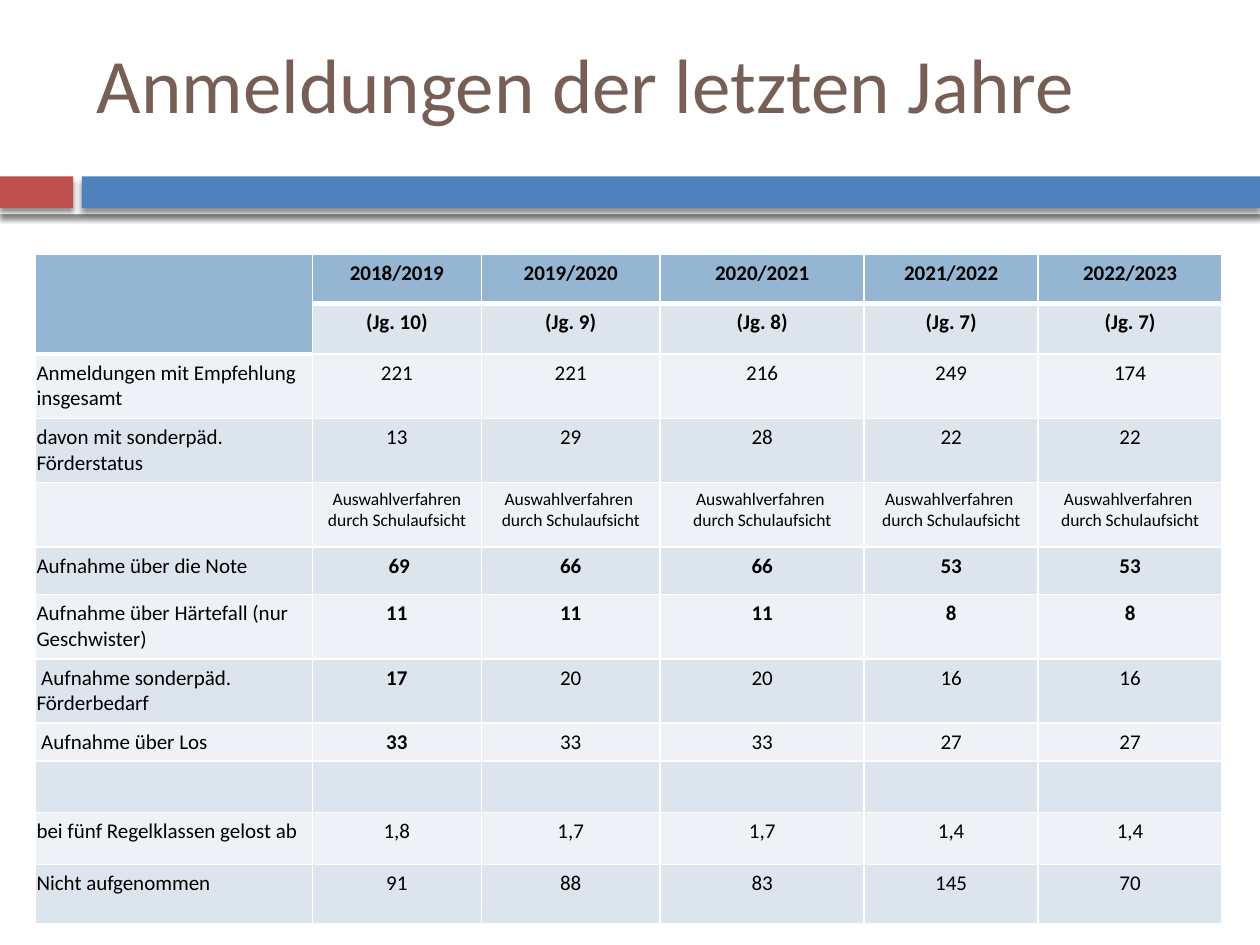
"""Build the slide with the table of school registrations by year."""
from lxml.etree import SubElement as Sub
from pptx import Presentation
from pptx.dml.color import RGBColor as RGB
from pptx.enum.shapes import MSO_SHAPE as Shape
from pptx.enum.text import MSO_ANCHOR as Anchor, PP_ALIGN as Align
from pptx.oxml.ns import qn
from pptx.util import Inches, Pt

WHITE = RGB(0xFF, 0xFF, 0xFF)
BLACK = RGB(0, 0, 0)
RED = RGB(0xC0, 0x50, 0x4D)
BLUE = RGB(0x4F, 0x81, 0xBD)
BROWN = RGB(0x77, 0x5F, 0x55)
HEAD = RGB(0x94, 0xB6, 0xD2)
DARK = RGB(0xDC, 0xE5, 0xEE)
LIGHT = RGB(0xEE, 0xF2, 0xF6)
FONT = "Calibri"

TITLE = "Anmeldungen der letzten Jahre"
BARS = [
    (0, 1.35, 10, 0.35, WHITE),
    (0, 1.4, 0.58, 0.25, RED),
    (0.65, 1.4, 9.35, 0.25, BLUE),
]
COLS = [2.2, 1.34, 1.42, 1.62, 1.38, 1.46]
PICK = "Auswahlverfahren |durch Schulaufsicht"
ROWS = [
    (0.39, 5, ["", "2018/2019", "2019/2020", "2020/2021", "2021/2022", "2022/2023"]),
    (0.3, 5, ["", "(Jg. 10)", "(Jg. 9)", "(Jg. 8)", "(Jg. 7)", "(Jg. 7)"]),
    (0.51, 0, ["Anmeldungen mit Empfehlung insgesamt", "221", "221", "216", "249", "174"]),
    (0.51, 0, ["davon mit sonderpäd. Förderstatus", "13", "29", "28", "22", "22"]),
    (0.51, 0, ["", "Auswahlverfahren durch Schulaufsicht"] + [PICK] * 4),
    (0.38, 5, ["Aufnahme über die Note", " 69", "66", "66", "53", "53"]),
    (0.51, 5, ["Aufnahme über Härtefall (nur\nGeschwister)", "11", "11", "11", "8", "8"]),
    (0.51, 1, [" Aufnahme sonderpäd. Förderbedarf", "17", "20", "20", "16", "16"]),
    (0.3, 1, [" Aufnahme über Los", "33", "33", "33", "27", "27"]),
    (0.41, 0, [""] * 6),
    (0.41, 0, ["bei fünf Regelklassen gelost ab", "1,8", "1,7", "1,7", "1,4", "1,4"]),
    (0.47, 0, ["Nicht aufgenommen", "91", "88", "83", "145", "70"]),
]
PICK_ROW = 4


def add_run(para, text, size, color, bold=False):
    run = para.add_run()
    run.text = text
    font = run.font
    font.name, font.size, font.bold = FONT, Pt(size), bold
    font.color.rgb = color


def add_bar(slide, left, top, width, height, color):
    bar = slide.shapes.add_shape(
        Shape.RECTANGLE, Inches(left), Inches(top), Inches(width), Inches(height))
    bar.fill.solid()
    bar.fill.fore_color.rgb = color
    bar.line.fill.background()
    bar.shadow.inherit = False
    glow = bar._element.spPr.find(qn("a:effectLst"))
    shade = Sub(glow, qn("a:outerShdw"), blurRad=str(Pt(3)), dist=str(Pt(2.4)),
                dir="5400000", algn="ctr", rotWithShape="0")
    tint = Sub(shade, qn("a:srgbClr"), val=str(BLACK))
    Sub(tint, qn("a:alpha"), val="45000")


def add_title(slide):
    box = slide.shapes.add_textbox(Inches(0.67), Inches(0.25), Inches(8.92), Inches(0.82))
    frame = box.text_frame
    frame.word_wrap = True
    frame.vertical_anchor = Anchor.MIDDLE
    add_run(frame.paragraphs[0], TITLE, 44, BROWN)


def add_edges(cell, top, base):
    props = cell._tc.get_or_add_tcPr()
    for side, width in (("L", 0.96), ("R", 0.96), ("T", top), ("B", base)):
        line = Sub(props, qn("a:ln" + side), w=str(Pt(width)))
        Sub(Sub(line, qn("a:solidFill")), qn("a:srgbClr"), val=str(WHITE))


def fill_cell(cell, text, row, col, bold):
    cell.margin_left = cell.margin_right = Inches(0.01)
    cell.margin_top = cell.margin_bottom = Inches(0.05)
    thick = row == 1 or (row == 2 and col == 0)
    add_edges(cell, 3 if thick else 0.96, 3 if row == 0 else 0.96)
    cell.fill.solid()
    cell.fill.fore_color.rgb = HEAD if row == 0 else (LIGHT, DARK)[row % 2]
    size = 10 if row == PICK_ROW else 12
    frame = cell.text_frame
    for n, line in enumerate(text.split("\n") if text else []):
        para = frame.add_paragraph() if n else frame.paragraphs[0]
        para.alignment = Align.CENTER if col else Align.LEFT
        for k, part in enumerate(line.split("|")):
            if k:
                para.add_line_break()
            add_run(para, part, size, BLACK, bold)


def add_grid(slide):
    high = sum(row[0] for row in ROWS)
    grid = slide.shapes.add_table(
        len(ROWS), len(COLS), Inches(0.28), Inches(2.02),
        Inches(sum(COLS)), Inches(high)).table
    for col, width in zip(grid.columns, COLS):
        col.width = Inches(width)
    for r, (height, bolds, texts) in enumerate(ROWS):
        grid.rows[r].height = Inches(height)
        for c, text in enumerate(texts):
            fill_cell(grid.cell(r, c), text, r, c, 0 < c <= bolds)
    grid.cell(0, 0).merge(grid.cell(1, 0))


def main():
    deck = Presentation()
    deck.slide_width, deck.slide_height = Inches(10), Inches(7.5)
    slide = deck.slides.add_slide(deck.slide_layouts[6])
    for bar in BARS:
        add_bar(slide, *bar)
    add_title(slide)
    add_grid(slide)
    deck.save("out.pptx")


if __name__ == "__main__":
    main()
